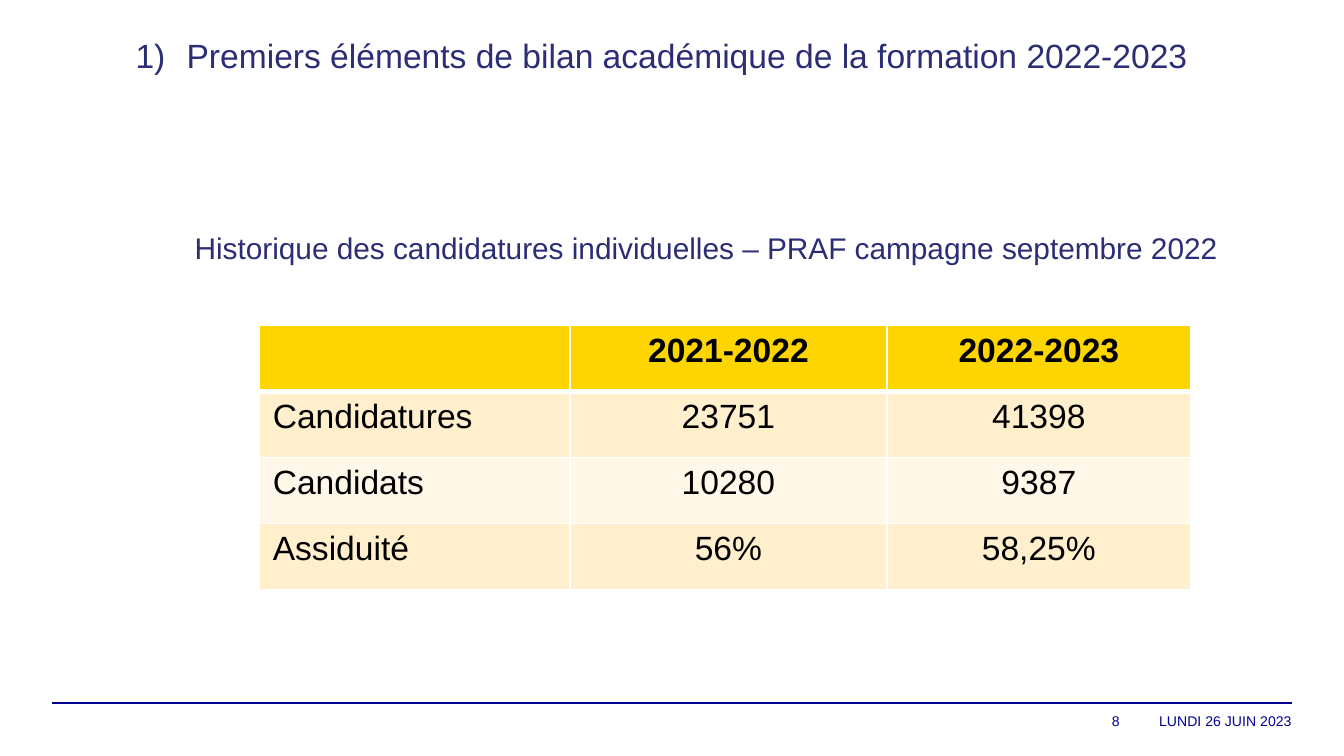
"""Build the slide on the history of individual applications."""
from lxml.etree import SubElement
from pptx import Presentation
from pptx.dml.color import RGBColor
from pptx.enum.shapes import MSO_CONNECTOR as Connector
from pptx.enum.text import MSO_ANCHOR as Anchor, PP_ALIGN as Align
from pptx.oxml.ns import qn
from pptx.util import Inches, Pt

THEME = {
    "font": "Arial",
    "navy": RGBColor.from_string("2B2E75"),
    "blue": RGBColor.from_string("000091"),
    "black": RGBColor.from_string("000000"),
    "header": RGBColor.from_string("FFD500"),
    "bands": [RGBColor.from_string("FFF7E7"), RGBColor.from_string("FFEFCC")],
    "border": "FFFFFF",
    "title": Pt(18),
    "subtitle": Pt(16),
    "footer": Pt(7.5),
}
WIDTH = Inches(10)
HEIGHT = WIDTH * 9 // 16
MARGIN = 0.039
FOOTER_TOP = 0.93
COLUMNS = [2.31, 2.36, 2.26]
ROW_HEIGHT = 1.97 / 4
ROWS = [
    ["", "2021-2022", "2022-2023"],
    ["Candidatures", "23751", "41398"],
    ["Candidats", "10280", "9387"],
    ["Assiduité", "56%", "58,25%"],
]


def write(paragraph, text, size, color, bold=False, align=Align.LEFT):
    paragraph.alignment = align
    run = paragraph.add_run() if text else paragraph
    run.text = text
    values = {"name": THEME["font"], "size": THEME[size], "bold": bold}
    for name, value in values.items():
        setattr(run.font, name, value)
    run.font.color.rgb = THEME[color]


def add_text(left, top, width, height, inset=None, anchor=Anchor.TOP):
    box = slide.shapes.add_textbox(
        int(left * WIDTH), int(top * HEIGHT), int(width * WIDTH), int(height * HEIGHT))
    values = {"word_wrap": True, "vertical_anchor": anchor}
    if inset is not None:
        values |= {f"margin_{side}": inset for side in ("left", "top", "right", "bottom")}
    for name, value in values.items():
        setattr(box.text_frame, name, value)
    return box.text_frame.paragraphs[0]


presentation = Presentation()
presentation.slide_width, presentation.slide_height = WIDTH, HEIGHT
slide = presentation.slides.add_slide(presentation.slide_layouts[6])

rule_y = int(FOOTER_TOP * HEIGHT)
rule = slide.shapes.add_connector(
    Connector.STRAIGHT, int(MARGIN * WIDTH), rule_y, int((1 - MARGIN) * WIDTH), rule_y)
rule.line.color.rgb = THEME["blue"]
rule.line.width = Pt(0.8)
SubElement(rule._element.spPr, qn("a:effectLst"))

right = 1 - MARGIN
for text, share in [("LUNDI 26 JUIN 2023", 0.128), ("8", 0.148)]:
    right -= share
    paragraph = add_text(right, FOOTER_TOP, share, 0.046, inset=0, anchor=Anchor.MIDDLE)
    write(paragraph, text, "footer", "blue", align=Align.RIGHT)

title = add_text(0.091, 0.037, 0.835, 0.126)
properties = title._p.get_or_add_pPr()
properties.set("marL", str(Inches(0.38)))
properties.set("indent", str(-Inches(0.38)))
SubElement(properties, qn("a:buFont"), typeface=THEME["font"])
SubElement(properties, qn("a:buAutoNum"), type="arabicParenR")
write(title, "Premiers éléments de bilan académique de la formation 2022-2023", "title", "navy")

table = slide.shapes.add_table(
    len(ROWS), len(COLUMNS), int(0.193 * WIDTH), int(0.43 * HEIGHT),
    Inches(sum(COLUMNS)), Inches(ROW_HEIGHT * len(ROWS))).table
for column, width in zip(table.columns, COLUMNS):
    column.width = Inches(width)
for row_index, row in enumerate(ROWS):
    table.rows[row_index].height = Inches(ROW_HEIGHT)
    is_header = row_index == 0
    border_widths = {"L": 1, "R": 1, "T": 3 if row_index == 1 else 1, "B": 3 if is_header else 1}
    for column_index, text in enumerate(row):
        cell = table.cell(row_index, column_index)
        write(cell.text_frame.paragraphs[0], text, "title", "black", bold=is_header,
              align=Align.CENTER if column_index else Align.LEFT)
        cell_properties = cell._tc.get_or_add_tcPr()
        for side, points in border_widths.items():
            border = SubElement(cell_properties, qn(f"a:ln{side}"), w=str(Pt(points)))
            SubElement(SubElement(border, qn("a:solidFill")), qn("a:srgbClr"), val=THEME["border"])
        cell.fill.solid()
        cell.fill.fore_color.rgb = THEME["header"] if is_header else THEME["bands"][row_index % 2]

subtitle = add_text(0.135, 0.295, 0.827, 0.066)
write(subtitle, "Historique des candidatures individuelles – PRAF campagne septembre 2022",
      "subtitle", "navy")

presentation.save("out.pptx")
